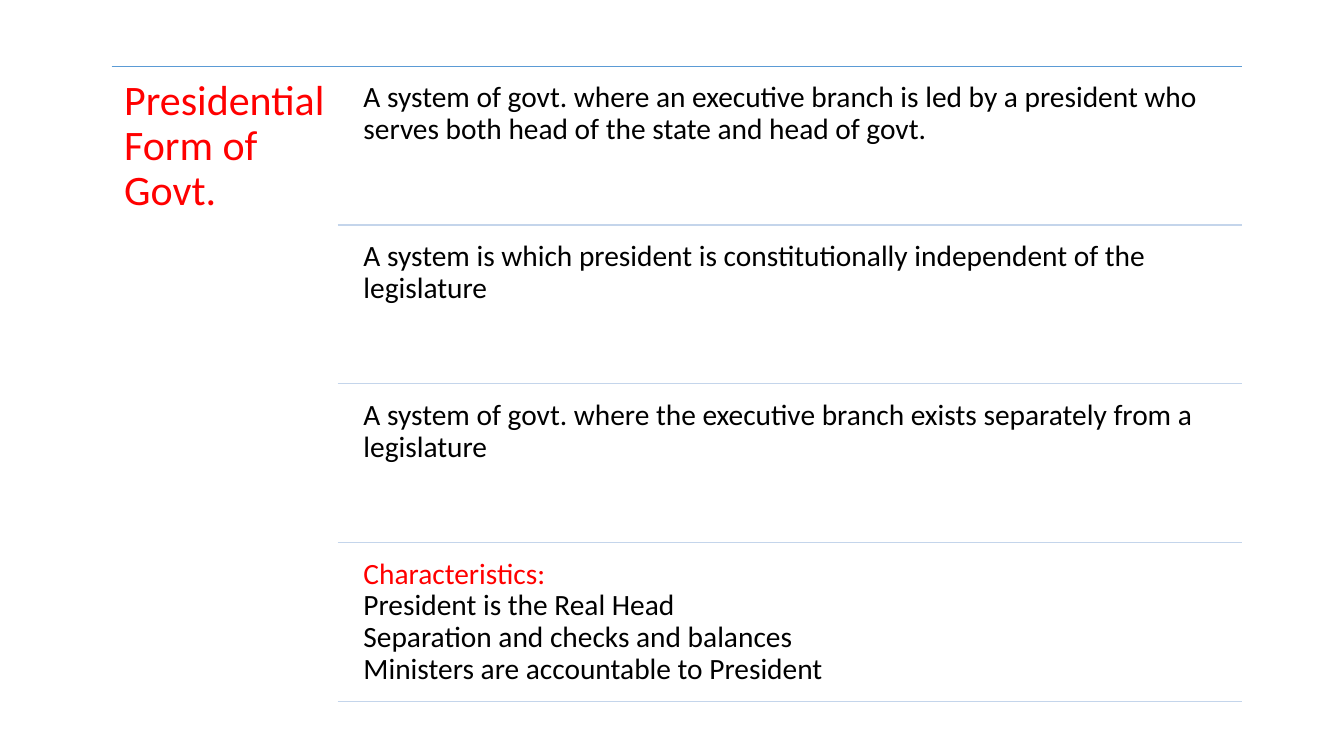
import pptx
import pptx.dml.color
import pptx.enum.shapes
import pptx.enum.text
import pptx.oxml
import pptx.oxml.ns
import pptx.util

Cm = pptx.util.Cm

COLORS = {"accent": "5B9BD5", "divider": "C4D5EB", "red": "FF0000", "black": "000000"}

TITLE = [("Presidential Form of Govt.", "red")]
# Each row is a list of (line, colour) pairs
ROWS = [
    [("A system of govt. where an executive branch is led by a president who "
      "serves both head of the state and head of govt.", "black")],
    [("A system is which president is constitutionally independent of the legislature", "black")],
    [("A system of govt. where the executive branch exists separately from a legislature", "black")],
    [("Characteristics:", "red"),
     ("President is the Real Head", "black"),
     ("Separation and checks and balances", "black"),
     ("Ministers are accountable to President", "black")],
]

LEFT, RIGHT, TOP = 2.81, 31.3, 1.67
DIVIDER_LEFT, ROW_LEFT = 8.51, 8.94
ROW_PITCH, ROW_HEIGHT, ROW_OFFSET = 4.0, 3.81, 0.19
ROW_WIDTH = RIGHT - ROW_LEFT


def add_text(slide, lines, left, top, width, height, size, inset, right_inset):
    """Add one paragraph whose coloured lines are parted by line breaks."""
    box = slide.shapes.add_textbox(Cm(left), Cm(top), Cm(width), Cm(height))
    frame = box.text_frame
    frame.word_wrap = True
    frame.vertical_anchor = pptx.enum.text.MSO_ANCHOR.TOP
    frame.margin_left = frame.margin_top = frame.margin_bottom = Cm(inset)
    frame.margin_right = Cm(right_inset)
    paragraph = frame.paragraphs[0]
    paragraph.line_spacing = 0.9
    paragraph.font.size = pptx.util.Pt(size)
    for index, (text, color) in enumerate(lines):
        if index:
            paragraph.add_line_break()
        run = paragraph.add_run()
        run.text = text
        run.font.name = "Calibri"
        run.font.size = pptx.util.Pt(size)
        run.font.color.rgb = pptx.dml.color.RGBColor.from_string(COLORS[color])


def add_rule(slide, left, y, color):
    connector = slide.shapes.add_connector(
        pptx.enum.shapes.MSO_CONNECTOR.STRAIGHT, Cm(left), Cm(y), Cm(RIGHT), Cm(y))
    connector.line.color.rgb = pptx.dml.color.RGBColor.from_string(COLORS[color])
    connector.line.width = pptx.util.Pt(1)
    properties = connector._element.spPr
    properties.append(properties.makeelement(pptx.oxml.ns.qn("a:effectLst"), {}))


def main():
    presentation = pptx.Presentation()
    presentation.slide_width = Cm(33.87)
    presentation.slide_height = Cm(19.05)
    slide = presentation.slides.add_slide(presentation.slide_layouts[6])

    add_rule(slide, LEFT, TOP, "accent")
    # The narrow right inset keeps the longest title word on one line
    add_text(slide, TITLE, LEFT, TOP, DIVIDER_LEFT - LEFT, ROW_PITCH * len(ROWS),
             size=30, inset=0.32, right_inset=0.1)
    for index, lines in enumerate(ROWS):
        row_top = TOP + index * ROW_PITCH
        add_text(slide, lines, ROW_LEFT, row_top + ROW_OFFSET, ROW_WIDTH, ROW_HEIGHT,
                 size=21, inset=0.22, right_inset=0.22)
        add_rule(slide, DIVIDER_LEFT, row_top + ROW_PITCH, "divider")

    presentation.save("out.pptx")


if __name__ == "__main__":
    main()
